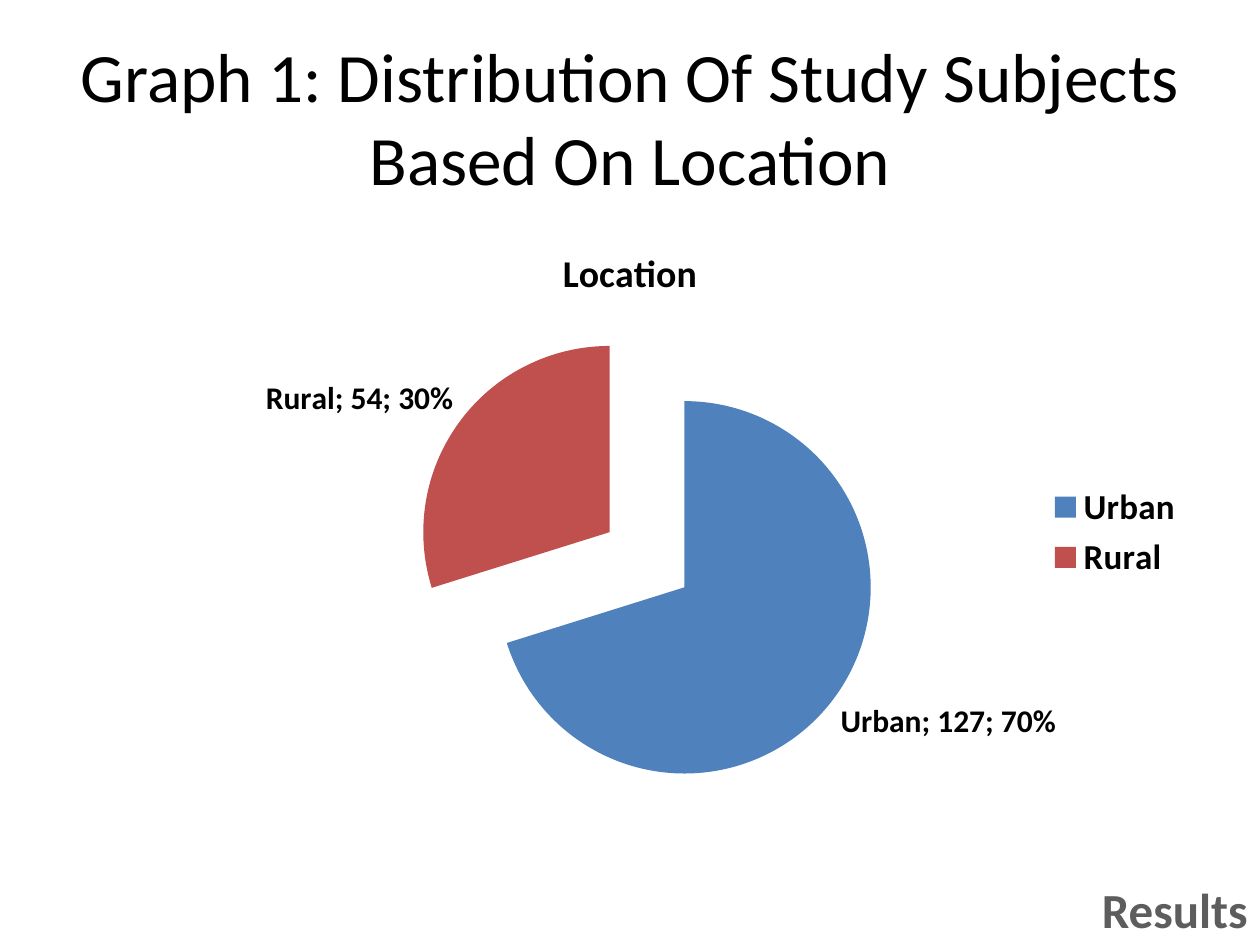
from lxml import etree
from pptx import Presentation
from pptx import util as u
from pptx.chart.data import CategoryChartData
from pptx.dml.color import RGBColor
from pptx.enum import chart as ch
from pptx.enum import text as t
from pptx.oxml import ns

BLACK = RGBColor(0, 0, 0)
GREY = RGBColor(0x5D, 0x5D, 0x5D)
BLUE = RGBColor(0x4F, 0x81, 0xBD)
RED = RGBColor(0xC0, 0x50, 0x4D)
FONT = "Calibri"

HEADING = "Graph 1: Distribution Of Study Subjects Based On Location"
CHART_TITLE = "Location"
SECTION = "Results"
LOCATIONS = [("Urban", 127, BLUE), ("Rural", 54, RED)]
EXPLOSION = 25

WIDTH, HEIGHT, MARGIN = 720, 540, 36
CONTENT_WIDTH = WIDTH - 2 * MARGIN
SECTION_HEIGHT = 41


def style_font(font, size, bold=False, color=BLACK):
    font.name = FONT
    font.size = u.Pt(size)
    font.bold = bold
    font.color.rgb = color


def write(frame, content, size, align, anchor=t.MSO_ANCHOR.TOP, **style):
    frame.word_wrap = True
    frame.vertical_anchor = anchor
    paragraph = frame.paragraphs[0]
    paragraph.alignment = align
    run = paragraph.add_run()
    run.text = content
    style_font(run.font, size, **style)


def add_pie(slide):
    data = CategoryChartData()
    data.categories = [name for name, _, _ in LOCATIONS]
    data.add_series(CHART_TITLE, [count for _, count, _ in LOCATIONS])
    pie = slide.shapes.add_chart(
        ch.XL_CHART_TYPE.PIE, u.Pt(MARGIN), u.Pt(126),
        u.Pt(CONTENT_WIDTH), u.Pt(356.4), data).chart
    style_font(pie.font, 18)

    pie.has_title = True
    write(pie.chart_title.text_frame, CHART_TITLE, 21.6, t.PP_ALIGN.CENTER, bold=True)

    pie.has_legend = True
    pie.legend.position = ch.XL_LEGEND_POSITION.RIGHT
    pie.legend.include_in_layout = True
    style_font(pie.legend.font, 20, bold=True)

    pie.plots[0].vary_by_categories = True
    slices = pie.plots[0].series[0]
    for index, (_, _, color) in enumerate(LOCATIONS):
        fill = slices.points[index].format.fill
        fill.solid()
        fill.fore_color.rgb = color
    explosion = etree.Element(ns.qn("c:explosion"), val=str(EXPLOSION))
    slices._element.find(ns.qn("c:dPt")).addprevious(explosion)

    labels = slices.data_labels
    labels.show_category_name = True
    labels.show_value = True
    labels.show_percentage = True
    labels.position = ch.XL_LABEL_POSITION.OUTSIDE_END
    style_font(labels.font, 18, bold=True)
    separator = etree.Element(ns.qn("c:separator"))
    separator.text = "; "
    labels._element.find(ns.qn("c:showBubbleSize")).addnext(separator)


def main():
    deck = Presentation()
    deck.slide_width, deck.slide_height = u.Pt(WIDTH), u.Pt(HEIGHT)
    slide = deck.slides.add_slide(deck.slide_layouts[5])

    heading = slide.shapes.title
    heading.left, heading.top = u.Pt(MARGIN), u.Pt(21.6)
    heading.width, heading.height = u.Pt(CONTENT_WIDTH), u.Pt(90)
    write(heading.text_frame, HEADING, 39.6, t.PP_ALIGN.CENTER, t.MSO_ANCHOR.MIDDLE)

    add_pie(slide)

    section = slide.shapes.add_textbox(
        0, u.Pt(HEIGHT - SECTION_HEIGHT), u.Pt(WIDTH), u.Pt(SECTION_HEIGHT))
    write(section.text_frame, SECTION, 28, t.PP_ALIGN.RIGHT, bold=True, color=GREY)

    deck.save("out.pptx")


if __name__ == "__main__":
    main()
